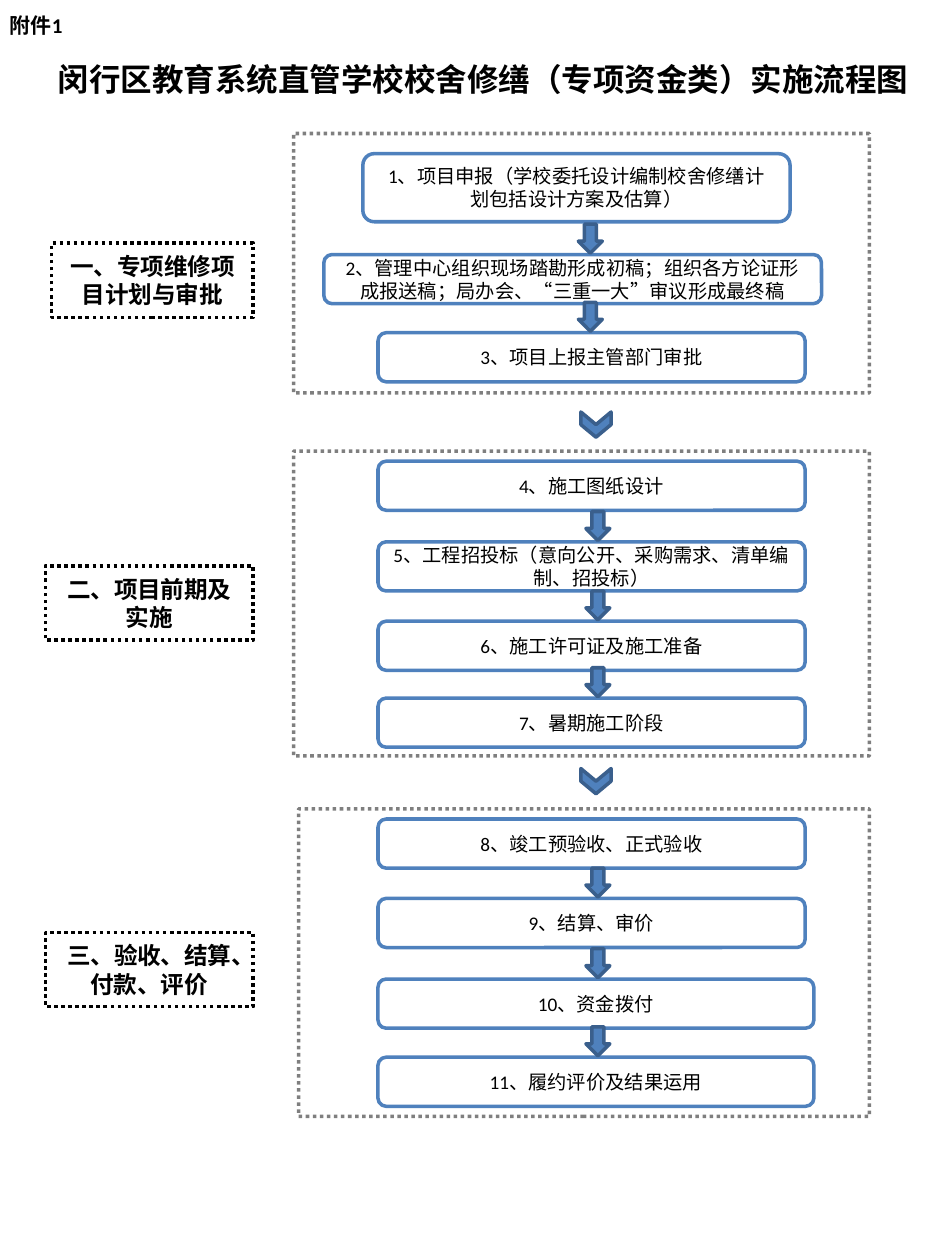
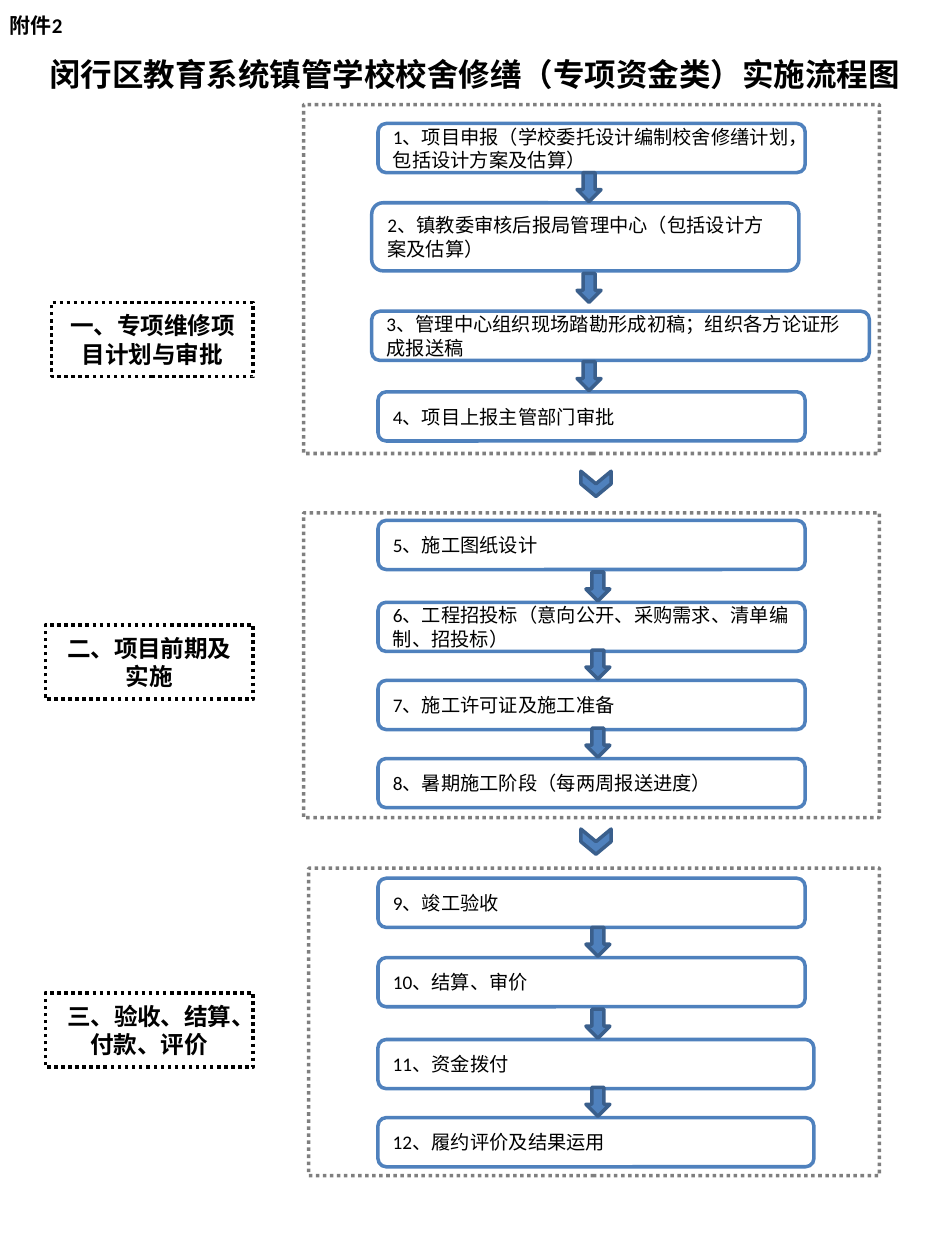
from pptx import Presentation
from pptx.dml.color import RGBColor
from pptx.enum.dml import MSO_LINE_DASH_STYLE as DASH
from pptx.enum.shapes import MSO_SHAPE as SHAPE
from pptx.enum.text import MSO_ANCHOR as ANCHOR, MSO_AUTO_SIZE as AUTO, PP_ALIGN as ALIGN
from pptx.oxml.ns import qn
from pptx.util import Pt
from lxml import etree

PX = 9144  # 100 px to the inch
BLACK, WHITE, BLUE, NAVY = "000000", "FFFFFF", "4F81BD", "3A5F8C"
ARROW_W, ARROW_H = 19, 23
STEP_LEFT, STEP_W, STEP_H = 300, 339, 39


def add_box(slide, kind, box, fill, line):
    shape = slide.shapes.add_shape(kind, *(v * PX for v in box))
    shape.shadow.inherit = False
    shape.fill.solid()
    shape.fill.fore_color.rgb = RGBColor.from_string(fill)
    shape.line.color.rgb = RGBColor.from_string(line)
    shape.line.width = Pt(2)
    return shape


def write(shape, text, size, bold=False, align=ALIGN.LEFT, anchor=ANCHOR.MIDDLE):
    frame = shape.text_frame
    frame.text = text
    frame.word_wrap = True
    frame.vertical_anchor = anchor
    paragraph = frame.paragraphs[0]
    paragraph.alignment = align
    font = paragraph.font
    font.name, font.size, font.bold = "Calibri", Pt(size), bold
    font.color.rgb = RGBColor.from_string(BLACK)


# Phase labels shared by both charts: text, left, width
labels = [
    ("一、专项维修项目计划与审批", 41, 160),
    ("二、项目前期及实施", 36, 165),
    ("三、验收、结算、付款、评价", 36, 165),
]

# Phase: label top, frame, arrow left, steps
# Step: text, top, then left, width and height where they differ
charts = [
    dict(
        title="闵行区教育系统直管学校校舍修缮（专项资金类）实施流程图",
        title_box=(36, 43, 709, 40),
        step_align=ALIGN.CENTER,
        chevron_tops=(325, 608),
        phases=[
            (193, (233, 106, 457, 206), 459, [
                ("项目申报（学校委托设计编制校舍修缮计划包括设计方案及估算）", 122, 288, 339, 54),
                ("管理中心组织现场踏勘形成初稿；组织各方论证形成报送稿；局办会、“三重一大”审议形成最终稿", 202, 257, 395),
                ("项目上报主管部门审批", 264),
            ]),
            (449, (233, 358, 457, 242), 465, [
                ("施工图纸设计", 366),
                ("工程招投标（意向公开、采购需求、清单编制、招投标）", 430),
                ("施工许可证及施工准备", 493),
                ("暑期施工阶段", 554),
            ]),
            (740, (237, 642, 453, 244), 465, [
                ("竣工预验收、正式验收", 650),
                ("结算、审价", 713),
                ("资金拨付", 777, 300, 346),
                ("履约评价及结果运用", 839, 300, 346),
            ]),
        ],
    ),
    dict(
        title="闵行区教育系统镇管学校校舍修缮（专项资金类）实施流程图",
        title_box=(29, 39, 716, 40),
        step_align=ALIGN.LEFT,
        chevron_tops=(372, 656),
        phases=[
            (240, (241, 83, 457, 277), 458, [
                ("项目申报（学校委托设计编制校舍修缮计划，包括设计方案及估算）", 98),
                ("镇教委审核后报局管理中心（包括设计方案及估算）", 161, 295, 339, 54),
                ("管理中心组织现场踏勘形成初稿；组织各方论证形成报送稿", 247, 295, 395),
                ("项目上报主管部门审批", 311),
            ]),
            (496, (241, 407, 457, 242), 465, [
                ("施工图纸设计", 413),
                ("工程招投标（意向公开、采购需求、清单编制、招投标）", 478),
                ("施工许可证及施工准备", 540),
                ("暑期施工阶段（每两周报送进度）", 602),
            ]),
            (788, (245, 689, 453, 244), 465, [
                ("竣工验收", 697),
                ("结算、审价", 760),
                ("资金拨付", 825, 300, 346),
                ("履约评价及结果运用", 887, 300, 346),
            ]),
        ],
    ),
]

prs = Presentation()
prs.slide_width, prs.slide_height = 750 * PX, 1000 * PX

for chart_no, chart in enumerate(charts, 1):
    slide = prs.slides.add_slide(prs.slide_layouts[5])

    # Title and attachment number
    title = slide.shapes.title
    title.left, title.top, title.width, title.height = (v * PX for v in chart["title_box"])
    write(title, chart["title"], 18, bold=True, anchor=ANCHOR.TOP)
    title.text_frame.auto_size = AUTO.NONE
    attachment = slide.shapes.add_textbox(-2 * PX, 5 * PX, 62 * PX, 30 * PX)
    write(attachment, f"附件{chart_no}", 12, bold=True, anchor=ANCHOR.TOP)

    step_no = 0
    for (label, label_left, label_w), phase in zip(labels, chart["phases"]):
        label_top, frame_box, arrow_left, steps = phase

        # Dotted frame with a half-transparent line, and the phase label
        frame = add_box(slide, SHAPE.RECTANGLE, frame_box, WHITE, BLACK)
        frame.line.dash_style = DASH.ROUND_DOT
        line_color = frame.line._ln.find(".//" + qn("a:srgbClr"))
        etree.SubElement(line_color, qn("a:alpha"), val="50000")
        tag = add_box(slide, SHAPE.RECTANGLE, (label_left, label_top, label_w, 59), WHITE, BLACK)
        tag.line.dash_style = DASH.ROUND_DOT
        write(tag, label, 13.5, bold=True, align=ALIGN.CENTER)

        # Steps
        spans = []
        for text, top, *size in steps:
            step_no += 1
            left, width, height = size + [STEP_LEFT, STEP_W, STEP_H][len(size):]
            step = add_box(slide, SHAPE.ROUNDED_RECTANGLE, (left, top, width, height), WHITE, BLUE)
            write(step, f"{step_no}、{text}", 11, align=chart["step_align"])
            spans.append((top, top + height))

        # Arrows from each step to the next
        for (_, bottom), (next_top, _) in zip(spans, spans[1:]):
            arrow_top = min(bottom + 2, next_top - ARROW_H - 1)
            add_box(slide, SHAPE.DOWN_ARROW, (arrow_left, arrow_top, ARROW_W, ARROW_H), BLUE, NAVY)

    # Chevrons between phases
    for top in chart["chevron_tops"]:
        chevron = add_box(slide, SHAPE.CHEVRON, (463, top, 20, 24), BLUE, NAVY)
        chevron.rotation = 90

prs.save("out.pptx")
